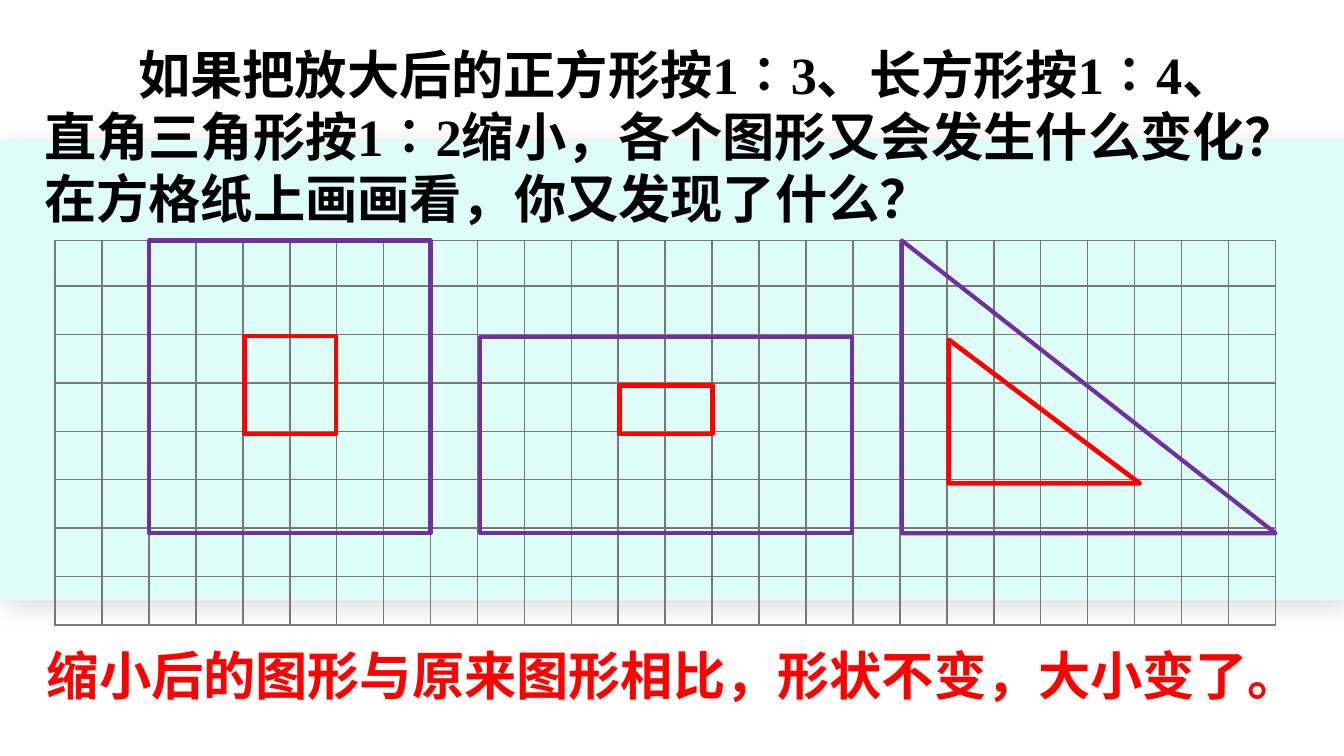
"""Build a maths slide on shrinking a square, a rectangle and a right triangle on squared paper."""
from dataclasses import dataclass

from lxml.etree import SubElement
from pptx import Presentation
from pptx.dml.color import RGBColor
from pptx.enum.shapes import MSO_SHAPE
from pptx.enum.text import MSO_ANCHOR, MSO_AUTO_SIZE, PP_ALIGN
from pptx.oxml import parse_xml
from pptx.oxml.ns import nsdecls, qn
from pptx.shapes.base import BaseShape
from pptx.slide import Slide
from pptx.text.text import TextFrame
from pptx.util import Inches, Pt

BLACK = RGBColor(0x00, 0x00, 0x00)
RED = RGBColor(0xFF, 0x00, 0x00)
PURPLE = RGBColor(0x70, 0x30, 0xA0)
MINT = RGBColor(0xDE, 0xFD, 0xF8)
GRID_GREY = RGBColor(0x78, 0x78, 0x78)
LATIN, CHINESE = "Times New Roman", "Noto Sans CJK SC"
RATIO = "∶"

SLIDE_WIDTH = Inches(10)
SLIDE_HEIGHT = SLIDE_WIDTH * 9 // 16
COLUMNS, ROWS = 26, 8
GRID_LEFT, GRID_TOP = Inches(0.41), Inches(1.79)
COLUMN, ROW = Inches(9.08 / COLUMNS), Inches(0.36)


@dataclass(frozen=True)
class Figure:
    """A figure on the squared paper, measured in grid columns and rows."""

    kind: MSO_SHAPE
    column: float
    row: float
    wide: float
    high: float
    colour: RGBColor
    weight: float


FIGURES = (
    Figure(MSO_SHAPE.RECTANGLE, 2, 0, 6, 6.05, PURPLE, 2.25),
    Figure(MSO_SHAPE.RECTANGLE, 9.05, 2, 7.93, 4.05, PURPLE, 2.25),
    Figure(MSO_SHAPE.RIGHT_TRIANGLE, 18.04, 0, 7.96, 6.05, PURPLE, 2.25),
    Figure(MSO_SHAPE.RECTANGLE, 4.04, 1.97, 1.95, 2.03, RED, 2.5),
    Figure(MSO_SHAPE.RECTANGLE, 12.03, 3, 1.98, 1, RED, 2.5),
    Figure(MSO_SHAPE.RIGHT_TRIANGLE, 19.04, 2.05, 4.07, 2.97, RED, 2.5),
)


def place(shape: BaseShape, left: float, top: float, width: float, height: float) -> None:
    """Position a shape in inches."""
    shape.left, shape.top = Inches(left), Inches(top)
    shape.width, shape.height = Inches(width), Inches(height)


def write(frame: TextFrame, pieces: list[tuple[str, str]], colour: RGBColor) -> None:
    """Write one bold paragraph, run by run, from text and font pairs."""
    frame.word_wrap = True
    frame.auto_size = MSO_AUTO_SIZE.NONE
    frame.vertical_anchor = MSO_ANCHOR.TOP
    frame.margin_top = Inches(0.06)
    paragraph = frame.paragraphs[0]
    paragraph.alignment = PP_ALIGN.LEFT
    paragraph.line_spacing = Pt(33.3)
    for text, typeface in pieces:
        run = paragraph.add_run()
        run.text = text
        run.font.size, run.font.bold = Pt(28), True
        run.font.name = typeface
        run.font.color.rgb = colour
        SubElement(run.font._element, qn("a:ea"), typeface=CHINESE)


def draw_band(slide: Slide) -> None:
    """Draw the shaded mint band behind everything else."""
    band = slide.shapes.add_shape(MSO_SHAPE.RECTANGLE, 0, Inches(1.04), SLIDE_WIDTH, Inches(3.43))
    band.fill.solid()
    band.fill.fore_color.rgb = MINT
    band.line.fill.background()
    band.shadow.inherit = False
    band._element.spPr.find(qn("a:effectLst")).append(parse_xml(
        f'<a:outerShdw {nsdecls("a")} blurRad="{Pt(15)}" dist="{Pt(5)}" dir="2700000">'
        '<a:srgbClr val="000000"><a:alpha val="15000"/></a:srgbClr></a:outerShdw>'))
    slide.shapes._spTree.insert(2, band._element)


def draw_grid(slide: Slide) -> None:
    """Draw the squared paper as an empty bordered table."""
    table = slide.shapes.add_table(
        ROWS, COLUMNS, GRID_LEFT, GRID_TOP, COLUMN * COLUMNS, ROW * ROWS).table
    table.first_row = table.horz_banding = False
    for column in table.columns:
        column.width = COLUMN
    for row in table.rows:
        row.height = ROW
    table.rows[0].height = Inches(0.34)
    for cell in table.iter_cells():
        cell.margin_left = cell.margin_right = cell.margin_top = cell.margin_bottom = 0
        cell.text_frame.paragraphs[0].font.size = Pt(8)
        cell.fill.background()
        properties = cell._tc.get_or_add_tcPr()
        for index, side in enumerate(("lnL", "lnR", "lnT", "lnB")):
            properties.insert(index, parse_xml(
                f'<a:{side} {nsdecls("a")} w="{Pt(1)}"><a:solidFill>'
                f'<a:srgbClr val="{GRID_GREY}"/></a:solidFill></a:{side}>'))


def draw_figure(slide: Slide, figure: Figure) -> None:
    """Outline one figure on the squared paper."""
    outline = slide.shapes.add_shape(
        figure.kind,
        GRID_LEFT + round(figure.column * COLUMN), GRID_TOP + round(figure.row * ROW),
        round(figure.wide * COLUMN), round(figure.high * ROW))
    outline.fill.background()
    outline.line.color.rgb = figure.colour
    outline.line.width = Pt(figure.weight)
    outline.shadow.inherit = False


def main() -> None:
    """Assemble and save the slide."""
    presentation = Presentation()
    presentation.slide_width, presentation.slide_height = SLIDE_WIDTH, SLIDE_HEIGHT
    slide = presentation.slides.add_slide(presentation.slide_layouts[5])
    draw_band(slide)

    question = slide.shapes.title
    place(question, 0.23, 0.26, 9.36, 1.51)
    write(question.text_frame, [
        ("如果把放大后的正方形按1", LATIN), (RATIO, CHINESE),
        ("3、长方形按1", LATIN), (RATIO, CHINESE),
        ("4、直角三角形按1", LATIN), (RATIO, CHINESE),
        ("2缩小，各个图形又会发生什么变化？在方格纸上画画看，你又发现了什么？", LATIN),
    ], BLACK)
    question.text_frame.paragraphs[0]._p.get_or_add_pPr().set("indent", str(Inches(0.7)))

    draw_grid(slide)
    for figure in FIGURES:
        draw_figure(slide, figure)

    conclusion = slide.shapes.add_textbox(
        Inches(0.25), Inches(4.73), Inches(9.78), Inches(0.57))
    write(conclusion.text_frame,
          [("缩小后的图形与原来图形相比，形状不变，大小变了。", CHINESE)], RED)
    presentation.save("out.pptx")


if __name__ == "__main__":
    main()
